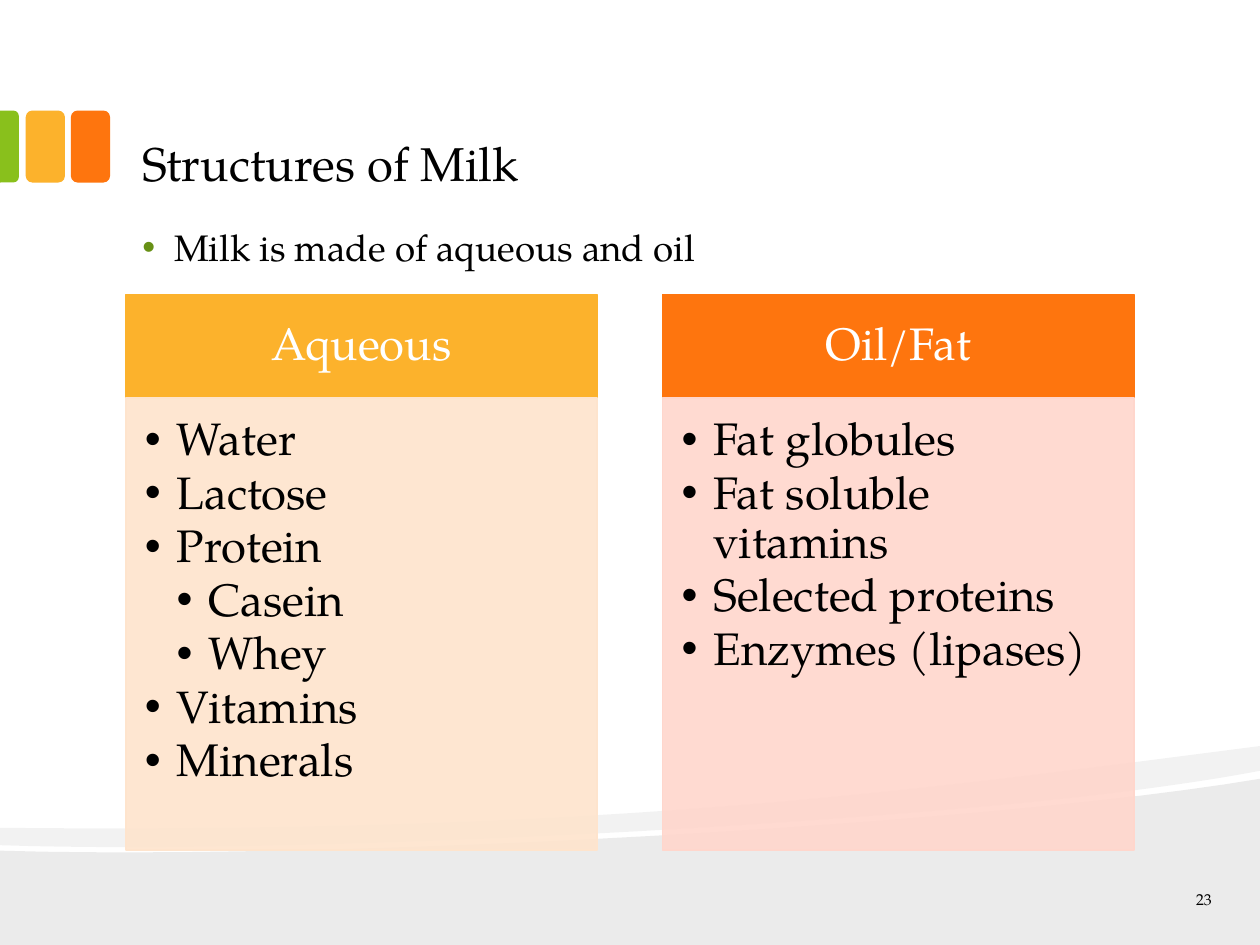
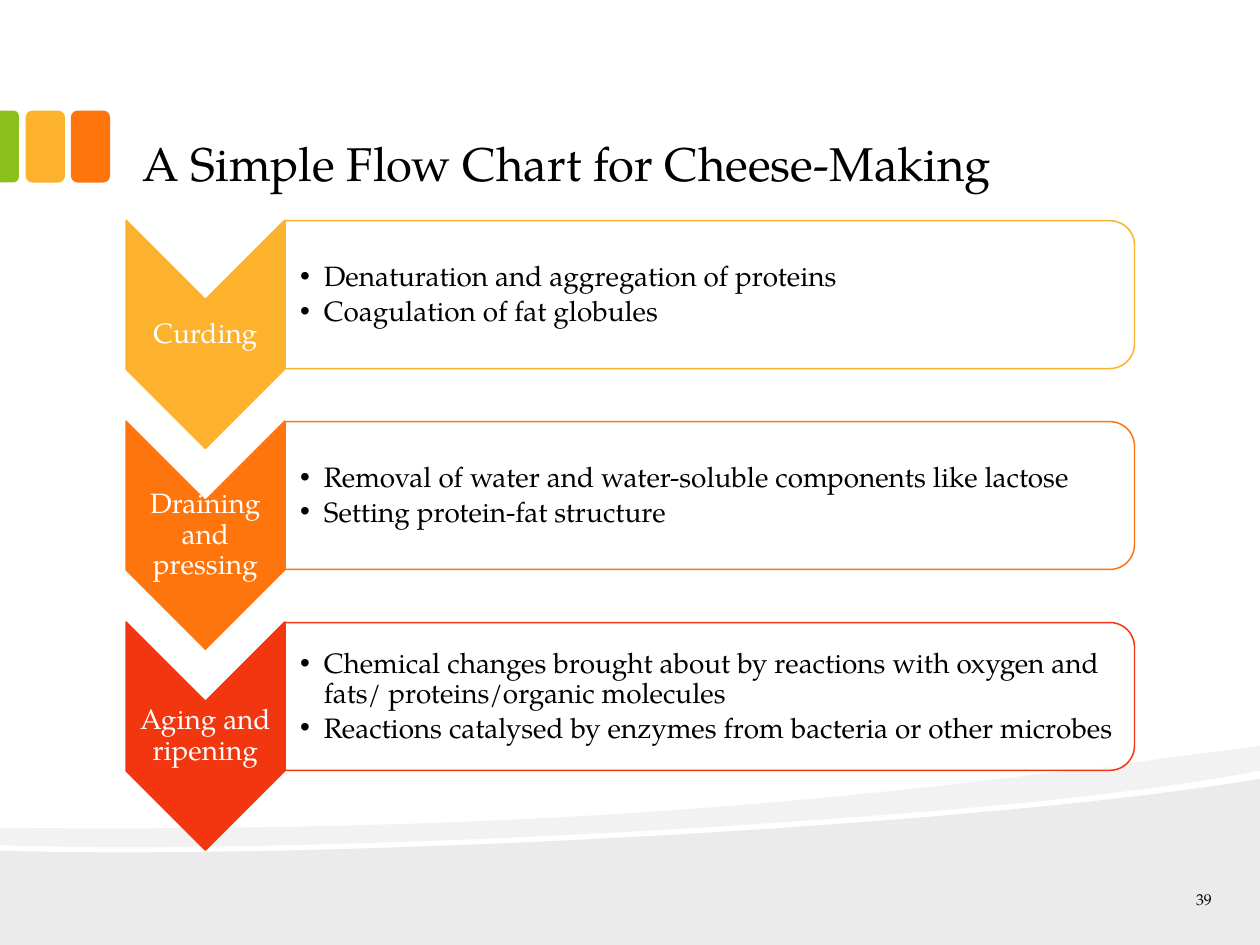
from lxml import etree
from pptx import Presentation
from pptx.dml.color import RGBColor
from pptx.enum.shapes import MSO_SHAPE
from pptx.enum.text import MSO_ANCHOR, MSO_AUTO_SIZE, PP_ALIGN
from pptx.oxml.ns import qn
from pptx.util import Cm, Pt

RECTANGLE = MSO_SHAPE.RECTANGLE
ROUNDED = MSO_SHAPE.ROUNDED_RECTANGLE
ROUND_TOP = MSO_SHAPE.ROUND_2_SAME_RECTANGLE
CHEVRON = MSO_SHAPE.CHEVRON
TOP, MIDDLE, BOTTOM = MSO_ANCHOR.TOP, MSO_ANCHOR.MIDDLE, MSO_ANCHOR.BOTTOM
LEFT, CENTER, RIGHT = PP_ALIGN.LEFT, PP_ALIGN.CENTER, PP_ALIGN.RIGHT
NO_AUTOFIT = MSO_AUTO_SIZE.NONE

FONT = "TeX Gyre Pagella"
BLACK, WHITE = "000000", "FFFFFF"
GREEN, DARK_GREEN = "89C01C", "679015"
YELLOW, ORANGE, RED = "FCB22C", "FE750E", "F23610"
PALE_YELLOW, PALE_RED = "FEE4CD", "FFD6CC"

TITLE_AND_BODY, TITLE_ONLY = 1, 5
PLACEHOLDER_INSETS = (0.33, 0.18, 0.33, 0.18)

# Lengths in cm; each wave is a start point, then lines (1 point) and curves (3 points)
WAVES = [
    (8, (25.4, 15.7), [
        [(25.4, 19.05)], [(0, 19.05)], [(0, 17.15)],
        [(6.71, 17.35), (19.86, 16.64), (25.4, 15.7)]]),
    (5, (25.4, 15.04), [
        [(25.4, 15.54)],
        [(23.93, 15.82), (21.89, 16.08), (19.61, 16.28)],
        [(13.28, 16.84), (4.9, 17.2), (0, 17.04)],
        [(0, 16.69)],
        [(12.42, 16.81), (18.49, 15.93), (25.4, 15.04)]]),
]


def color(hex_value):
    return RGBColor.from_string(hex_value)


def curve_points(start, controls, steps=24):
    """Points along a cubic curve, without its start."""
    points = (start, *controls)
    result = []
    for step in range(1, steps + 1):
        t = step / steps
        weights = ((1 - t) ** 3, 3 * t * (1 - t) ** 2, 3 * t ** 2 * (1 - t), t ** 3)
        result.append(tuple(sum(weight * point[axis] for weight, point in zip(weights, points))
                            for axis in (0, 1)))
    return result


def add_bullet(paragraph, indent, level, bullet_color):
    properties = paragraph._p.get_or_add_pPr()
    properties.set("marL", str(Cm(indent * (level + 1))))
    properties.set("indent", str(-Cm(indent)))
    bullet = etree.SubElement(properties, qn("a:buClr"))
    etree.SubElement(bullet, qn("a:srgbClr"), val=bullet_color)
    etree.SubElement(properties, qn("a:buFont"), typeface="Arial")
    etree.SubElement(properties, qn("a:buChar"), char="•")


class Deck:
    def __init__(self):
        self.presentation = Presentation()
        self.presentation.slide_width = Cm(25.4)
        self.presentation.slide_height = Cm(19.05)
        self.slide = None

    def new_slide(self, layout, title, number):
        layouts = self.presentation.slide_layouts
        self.slide = self.presentation.slides.add_slide(layouts[layout])
        self.decorate()
        self.placeholder(0, (2.54, 0.43, 20.32, 3.61), [title], 27, anchor=BOTTOM)
        self.text_box((23.06, 17.91, 1.7, 0.5), [str(number)], 9, align=RIGHT,
                      insets=PLACEHOLDER_INSETS)

    def decorate(self):
        # Waves along the foot
        for opacity, start, segments in WAVES:
            outline = [start]
            for segment in segments:
                outline += curve_points(outline[-1], segment) if len(segment) == 3 else segment
            points = [(Cm(x), Cm(y)) for x, y in outline]
            builder = self.slide.shapes.build_freeform(*points[0])
            builder.add_line_segments(points[1:], close=True)
            self.paint(builder.convert_to_shape(), BLACK, opacity=opacity)
        # Tiles beside the title
        self.shape(ROUNDED, (1.43, 2.23, 0.79, 1.45), ORANGE)
        self.shape(ROUNDED, (0.52, 2.23, 0.79, 1.45), YELLOW)
        tile = self.shape(ROUND_TOP, (0, 2.23, 0.38, 1.45), GREEN, turned=True)
        tile.adjustments[0] = 0.29

    def paint(self, shape, fill, line=None, opacity=100):
        shape.shadow.inherit = False
        shape.fill.solid()
        shape.fill.fore_color.rgb = color(fill)
        if opacity < 100:
            fill_color = shape.element.spPr.find(qn("a:solidFill")).find(qn("a:srgbClr"))
            etree.SubElement(fill_color, qn("a:alpha"), val=str(opacity * 1000))
        if line:
            shape.line.color.rgb = color(line)
            shape.line.width = Pt(0.85)
        else:
            shape.line.fill.background()

    def shape(self, kind, box, fill, line=None, opacity=100, turned=False):
        """Draw a shape that fills the box, also when turned by 90 degrees."""
        left, top, width, height = box
        if turned:
            left, top = left + (width - height) / 2, top + (height - width) / 2
            width, height = height, width
        shape = self.slide.shapes.add_shape(kind, Cm(left), Cm(top), Cm(width), Cm(height))
        shape.rotation = 90 if turned else 0
        self.paint(shape, fill, line, opacity)
        return shape

    def set_text(self, shape, items, size, text_color=BLACK, align=LEFT, anchor=MIDDLE,
                 insets=(0, 0, 0, 0), spacing=0.9, indent=None, bullet_color=BLACK):
        """Fill a shape with items: a text, or a (text, level) pair."""
        frame = shape.text_frame
        frame.word_wrap = True
        frame.auto_size = NO_AUTOFIT
        frame.vertical_anchor = anchor
        (frame.margin_left, frame.margin_top,
         frame.margin_right, frame.margin_bottom) = map(Cm, insets)
        for index, item in enumerate(items):
            text, level = (item, 0) if isinstance(item, str) else item
            paragraph = frame.add_paragraph() if index else frame.paragraphs[0]
            paragraph.text = text
            paragraph.level = level
            paragraph.alignment = align
            paragraph.line_spacing = spacing
            paragraph.space_before = Pt(0)
            paragraph.space_after = Pt(2.5 if indent else 0)
            if indent:
                add_bullet(paragraph, indent, level, bullet_color)
            paragraph.font.name = FONT
            paragraph.font.size = Pt(size)
            paragraph.font.color.rgb = color(text_color)

    def text_box(self, box, items, size, **style):
        shape = self.slide.shapes.add_textbox(*map(Cm, box))
        self.set_text(shape, items, size, **style)

    def placeholder(self, index, box, items, size, **style):
        shape = self.slide.placeholders[index]
        shape.left, shape.top, shape.width, shape.height = map(Cm, box)
        spacing = 0.9 if index else 1.0
        self.set_text(shape, items, size, insets=PLACEHOLDER_INSETS, spacing=spacing, **style)

    def panel(self, left, heading, items, strong, pale):
        width = 9.5
        header = self.shape(RECTANGLE, (left, 5.94, width, 2.08), strong, strong)
        self.set_text(header, [heading], 26, WHITE, CENTER, insets=(0.5, 0.3, 0.5, 0.3))
        content = self.shape(RECTANGLE, (left, 8.02, width, 9.12), pale, pale, opacity=90)
        self.set_text(content, items, 26, anchor=TOP, insets=(0.38, 0.38, 0.5, 0.58),
                      indent=0.64)

    def step(self, top, label, items, accent):
        self.shape(CHEVRON, (2.54, top, 3.2, 4.6), accent, accent, turned=True)
        self.text_box((2.54, top + 1.61, 3.2, 1.37), [label], 16, text_color=WHITE,
                      align=CENTER, insets=(0.03, 0.03, 0.03, 0.03))
        self.shape(ROUND_TOP, (5.75, top + 0.01, 17.12, 2.98), WHITE, accent,
                   opacity=90, turned=True)
        self.text_box((5.75, top + 0.16, 16.97, 2.69), items, 16,
                      insets=(0.3, 0.03, 0.03, 0.03), indent=0.48)


def main():
    deck = Deck()

    # Structures of milk: two panels
    deck.new_slide(TITLE_AND_BODY, "Structures of Milk", 23)
    deck.placeholder(1, (2.54, 4.45, 20.96, 12.7), ["Milk is made of aqueous and oil"], 21,
                     anchor=TOP, indent=0.64, bullet_color=DARK_GREEN)
    deck.panel(2.54, "Aqueous",
               ["Water", "Lactose", "Protein", ("Casein", 1), ("Whey", 1),
                "Vitamins", "Minerals"], YELLOW, PALE_YELLOW)
    deck.panel(13.36, "Oil/Fat",
               ["Fat globules", "Fat soluble vitamins", "Selected proteins",
                "Enzymes (lipases)"], ORANGE, PALE_RED)

    # Cheese-making: three steps at equal distance
    deck.new_slide(TITLE_ONLY, "A Simple Flow Chart for Cheese-Making", 39)
    steps = [
        ("Curding", YELLOW,
         ["Denaturation and aggregation of proteins", "Coagulation of fat globules"]),
        ("Draining and pressing", ORANGE,
         ["Removal of water and water-soluble components like lactose",
          "Setting protein-fat structure"]),
        ("Aging and ripening", RED,
         ["Chemical changes brought about by reactions with oxygen and "
          "fats/ proteins/organic molecules",
          "Reactions catalysed by enzymes from bacteria or other microbes"]),
    ]
    for index, (label, accent, items) in enumerate(steps):
        deck.step(4.44 + index * 4.05, label, items, accent)

    deck.presentation.save("out.pptx")


if __name__ == "__main__":
    main()
